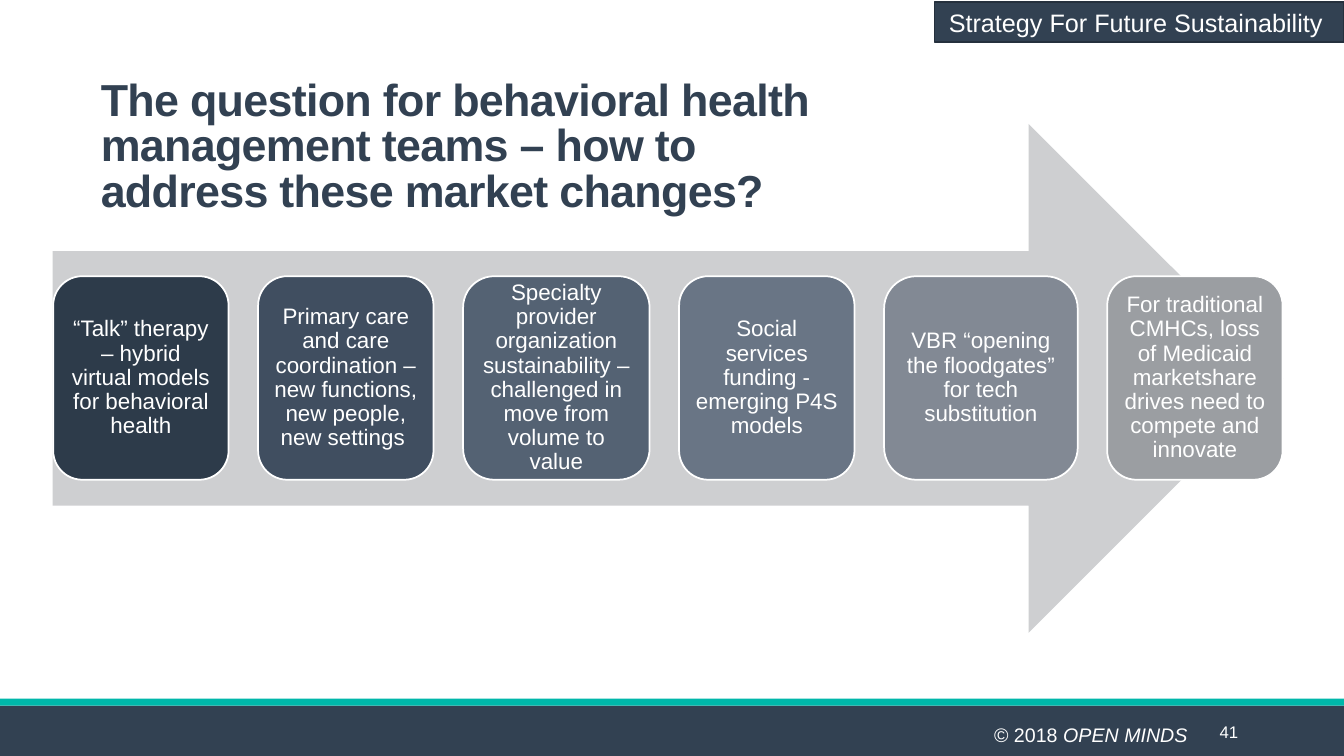
from pptx import Presentation
from pptx.dml.color import RGBColor
from pptx.enum import shapes, text
from pptx.util import Pt

theme = {
    "font": "Arial",
    "navy": "324152", "edge": "25303D", "teal": "00B7AA",
    "arrow": "CECFD1", "white": "FFFFFF",
    "title": 32, "tag": 18, "step": 16, "foot": 14, "page": 12,
}
kind = shapes.MSO_SHAPE
align = text.PP_ALIGN
anchor = text.MSO_ANCHOR

deck = Presentation()
deck.slide_width, deck.slide_height = Pt(960), Pt(540)
slide = deck.slides.add_slide(deck.slide_layouts[6])


def draw(form, box, fill, edge=None):
    shape = slide.shapes.add_shape(form, *map(Pt, box))
    shape.shadow.inherit = False
    shape.fill.solid()
    shape.fill.fore_color.rgb = RGBColor.from_string(theme.get(fill, fill))
    if edge:
        shape.line.color.rgb = RGBColor.from_string(theme[edge])
        shape.line.width = Pt(1.25)
    else:
        shape.line.fill.background()
    return shape


def write(shape, words, size, color="white", side=align.LEFT,
          mid=anchor.MIDDLE, pads=(7.2, 3.6, 7.2, 3.6)):
    """Fill a shape with one paragraph and return that paragraph."""
    frame = shape.text_frame
    frame.word_wrap = True
    frame.vertical_anchor = mid
    (frame.margin_left, frame.margin_top,
     frame.margin_right, frame.margin_bottom) = map(Pt, pads)
    frame.text = words
    para = frame.paragraphs[0]
    para.alignment = side
    font = para.runs[0].font
    font.name, font.size = theme["font"], Pt(theme[size])
    font.color.rgb = RGBColor.from_string(theme[color])
    return para


# Footer
draw(kind.RECTANGLE, (0, 504, 960, 36), "navy")
draw(kind.RECTANGLE, (0, 499, 960, 5), "teal")
foot = slide.shapes.add_textbox(Pt(86.4), Pt(512.6), Pt(769), Pt(23))
para = write(foot, "© 2018 ", "foot", side=align.RIGHT, mid=anchor.TOP)
name = para.add_run()
name.text = "OPEN MINDS"
name.font.name, name.font.size = theme["font"], Pt(theme["foot"])
name.font.italic = True
name.font.color.rgb = RGBColor.from_string(theme["white"])
page = slide.shapes.add_textbox(Pt(864), Pt(508.5), Pt(96), Pt(28.8))
write(page, "41", "page")

# Arrow with its steps
draw(kind.RIGHT_ARROW, (37.5, 88.5, 879, 363.5), "arrow")
steps = [
    (125.3, "2D3B4A", "“Talk” therapy – hybrid virtual models for behavioral health"),
    (125.3, "404E60", "Primary care and care coordination – new functions, "
                      "new people, new settings "),
    (133.2, "546273", "Specialty provider organization sustainability – "
                      "challenged in move from volume to value"),
    (125.3, "697585", "Social services funding - emerging P4S models"),
    (138.3, "828994", "VBR “opening the floodgates” for tech substitution"),
    (125.3, "9B9EA2", "For traditional CMHCs, loss of Medicaid marketshare "
                      "drives need to compete and innovate"),
]
left, gap = 38, 21.1
for width, fill, words in steps:
    step = draw(kind.ROUNDED_RECTANGLE, (left, 197.3, width, 145.4), fill, "white")
    para = write(step, words, "step", side=align.CENTER, pads=(4.8,) * 4)
    para.line_spacing = 0.9
    left += width + gap

# Title and section tag
title = slide.shapes.add_textbox(Pt(72), Pt(66.2), Pt(528.5), Pt(92.2))
para = write(title,
             "The question for behavioral health management teams – "
             "how to address these market changes?",
             "title", "navy", mid=anchor.BOTTOM, pads=(0, 0, 7.2, 3.6))
para.line_spacing = 0.85
para.runs[0].font.bold = True
para.runs[0].font._element.set("spc", "-50")
tag = draw(kind.RECTANGLE, (667.5, 1.2, 292.5, 29), "navy", "edge")
write(tag, "Strategy For Future Sustainability ", "tag", side=align.CENTER)

deck.save("out.pptx")
